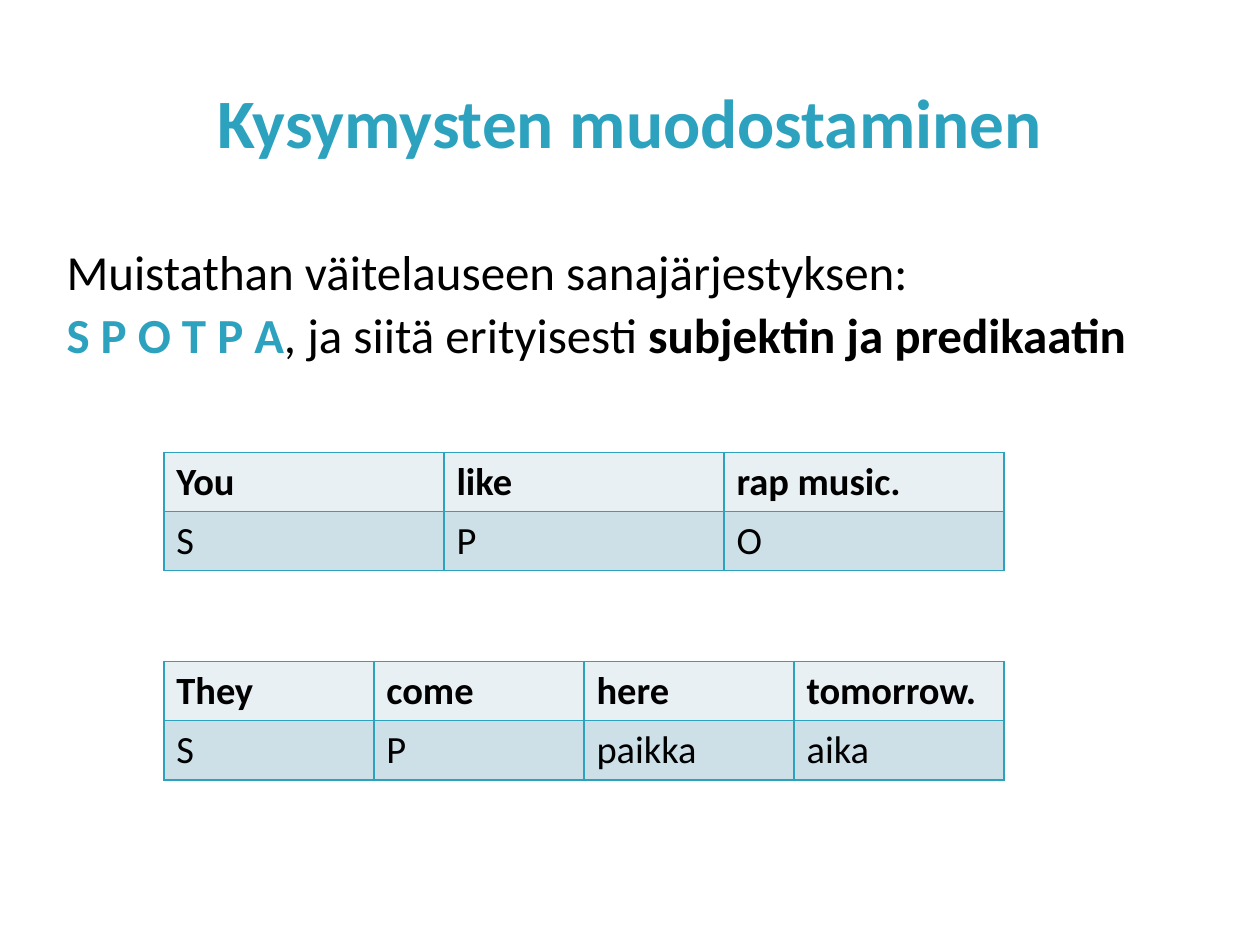
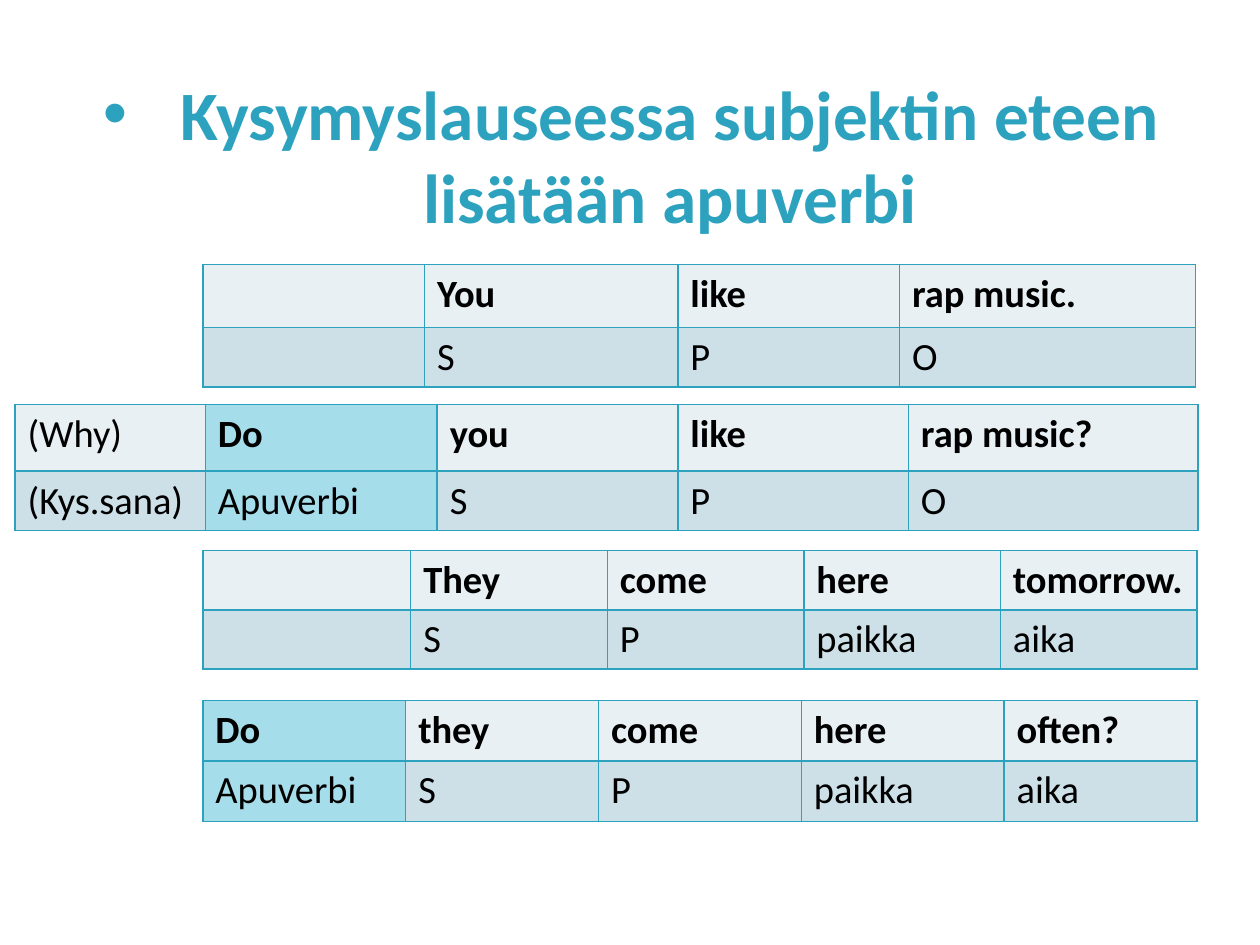
from dataclasses import dataclass

import pptx
import pptx.dml.color
import pptx.enum.text
import pptx.oxml
import pptx.oxml.ns
import pptx.util
from pptx.util import Inches


@dataclass(frozen=True)
class Theme:
    font: str = "Calibri"
    accent: str = "2DA2BF"
    text: str = "000000"
    words_fill: str = "E8F0F4"
    parts_fill: str = "CDE0E8"
    auxiliary_fill: str = "A6DDEA"
    title_size: float = 39.6
    body_size: float = 28
    cell_size: float = 22
    border_width: float = 1


THEME = Theme()
ROW_HEIGHT = 0.47


def rgb(colour):
    return pptx.dml.color.RGBColor.from_string(colour)


def style_font(font, size, colour, bold=False):
    font.name = THEME.font
    font.size = pptx.util.Pt(size)
    font.color.rgb = rgb(colour)
    font.bold = bold


def add_element(parent, tag, **attributes):
    element = pptx.oxml.parse_xml(f"<a:{tag} {pptx.oxml.ns.nsdecls('a')}/>")
    for name, value in attributes.items():
        element.set(name, str(value))
    parent.append(element)
    return element


def add_text_box(page, left, top, width, height):
    box = page.shapes.add_textbox(Inches(left), Inches(top), Inches(width), Inches(height))
    box.text_frame.word_wrap = True
    return box.text_frame


def add_title(page, text, left, top, width, height, bulleted=False):
    frame = add_text_box(page, left, top, width, height)
    frame.vertical_anchor = pptx.enum.text.MSO_ANCHOR.MIDDLE
    frame.text = text
    para = frame.paragraphs[0]
    para.alignment = pptx.enum.text.PP_ALIGN.CENTER
    if bulleted:
        properties = para._p.get_or_add_pPr()
        properties.set("marL", str(Inches(0.62)))
        properties.set("indent", str(Inches(-0.62)))
        add_element(properties, "buFont", typeface="Arial")
        add_element(properties, "buChar", char="•")
    for span in para.runs:
        style_font(span.font, THEME.title_size, THEME.accent, bold=True)


def add_reminder(page, left, top, width, height):
    lines = [
        [("Muistathan väitelauseen sanajärjestyksen:", THEME.text, False)],
        [
            ("S P O T P A", THEME.accent, True),
            (", ja siitä erityisesti ", THEME.text, False),
            ("subjektin ja predikaatin", THEME.text, True),
        ],
    ]
    frame = add_text_box(page, left, top, width, height)
    for index, line in enumerate(lines):
        para = frame.add_paragraph() if index else frame.paragraphs[0]
        para.line_spacing = 0.9
        para.space_before = pptx.util.Pt(5.6 if index else 0)
        for text, colour, bold in line:
            span = para.add_run()
            span.text = text
            style_font(span.font, THEME.body_size, colour, bold)


def add_borders(cell):
    """Outline a cell; the lines must precede its fill in the XML."""
    properties = cell._tc.get_or_add_tcPr()
    for side in ("lnL", "lnR", "lnT", "lnB"):
        line = add_element(properties, side, w=pptx.util.Pt(THEME.border_width))
        add_element(add_element(line, "solidFill"), "srgbClr", val=THEME.accent)


def add_sentence_table(page, left, top, columns, words, parts, heights=(ROW_HEIGHT, ROW_HEIGHT)):
    """Show a sentence above its parts; the auxiliary's column is highlighted."""
    frame = page.shapes.add_table(
        2, len(columns), Inches(left), Inches(top), Inches(sum(columns)), Inches(sum(heights))
    )
    table = frame.table
    table.first_row = table.horz_banding = False
    for column, width in zip(table.columns, columns):
        column.width = Inches(width)
    for row, height in zip(table.rows, heights):
        row.height = Inches(height)

    row_fills = (THEME.words_fill, THEME.parts_fill)
    for row_index, texts in enumerate((words, parts)):
        for column_index, text in enumerate(texts):
            cell = table.cell(row_index, column_index)
            add_borders(cell)
            is_auxiliary = parts[column_index] == "Apuverbi"
            cell.fill.solid()
            cell.fill.fore_color.rgb = rgb(
                THEME.auxiliary_fill if is_auxiliary else row_fills[row_index]
            )
            cell.text = text
            bold = row_index == 0 and not text.startswith("(")
            for span in cell.text_frame.paragraphs[0].runs:
                style_font(span.font, THEME.cell_size, THEME.text, bold)


def build_statement_page(page):
    add_title(page, "Kysymysten muodostaminen", 0.5, 0.52, 9, 0.87)
    add_reminder(page, 0.43, 1.92, 9, 1.1)
    sentences = [
        (3.59, ["You", "like", "rap music."], ["S", "P", "O"]),
        (5.25, ["They", "come", "here", "tomorrow."], ["S", "P", "paikka", "aika"]),
    ]
    for top, words, parts in sentences:
        columns = [6.67 / len(words)] * len(words)
        add_sentence_table(page, 1.3, top, columns, words, parts)


def build_question_page(page):
    title = "Kysymyslauseessa subjektin eteen lisätään apuverbi"
    add_title(page, title, 0.51, 0.6, 9, 1.25, bulleted=True)
    left = 1.61
    add_sentence_table(
        page, left, 2.1, [1.76, 2.01, 1.76, 2.35],
        ["", "You", "like", "rap music."], ["", "S", "P", "O"], (0.5, ROW_HEIGHT),
    )
    add_sentence_table(
        page, 0.12, 3.21, [1.51, 1.84, 1.91, 1.83, 2.3],
        ["(Why)", "Do", "you", "like", "rap music?"],
        ["(Kys.sana)", "Apuverbi", "S", "P", "O"], (0.53, ROW_HEIGHT),
    )
    add_sentence_table(
        page, left, 4.37, [1.65] + [1.56] * 4,
        ["", "They", "come", "here", "tomorrow."], ["", "S", "P", "paikka", "aika"],
    )
    add_sentence_table(
        page, left, 5.56, [1.61, 1.53, 1.61, 1.61, 1.53],
        ["Do", "they", "come", "here", "often?"],
        ["Apuverbi", "S", "P", "paikka", "aika"], (0.48, 0.48),
    )


def main():
    deck = pptx.Presentation()
    deck.slide_width, deck.slide_height = Inches(10), Inches(7.5)
    blank_layout = deck.slide_layouts[6]
    for build_page in (build_statement_page, build_question_page):
        build_page(deck.slides.add_slide(blank_layout))
    deck.save("out.pptx")


if __name__ == "__main__":
    main()
